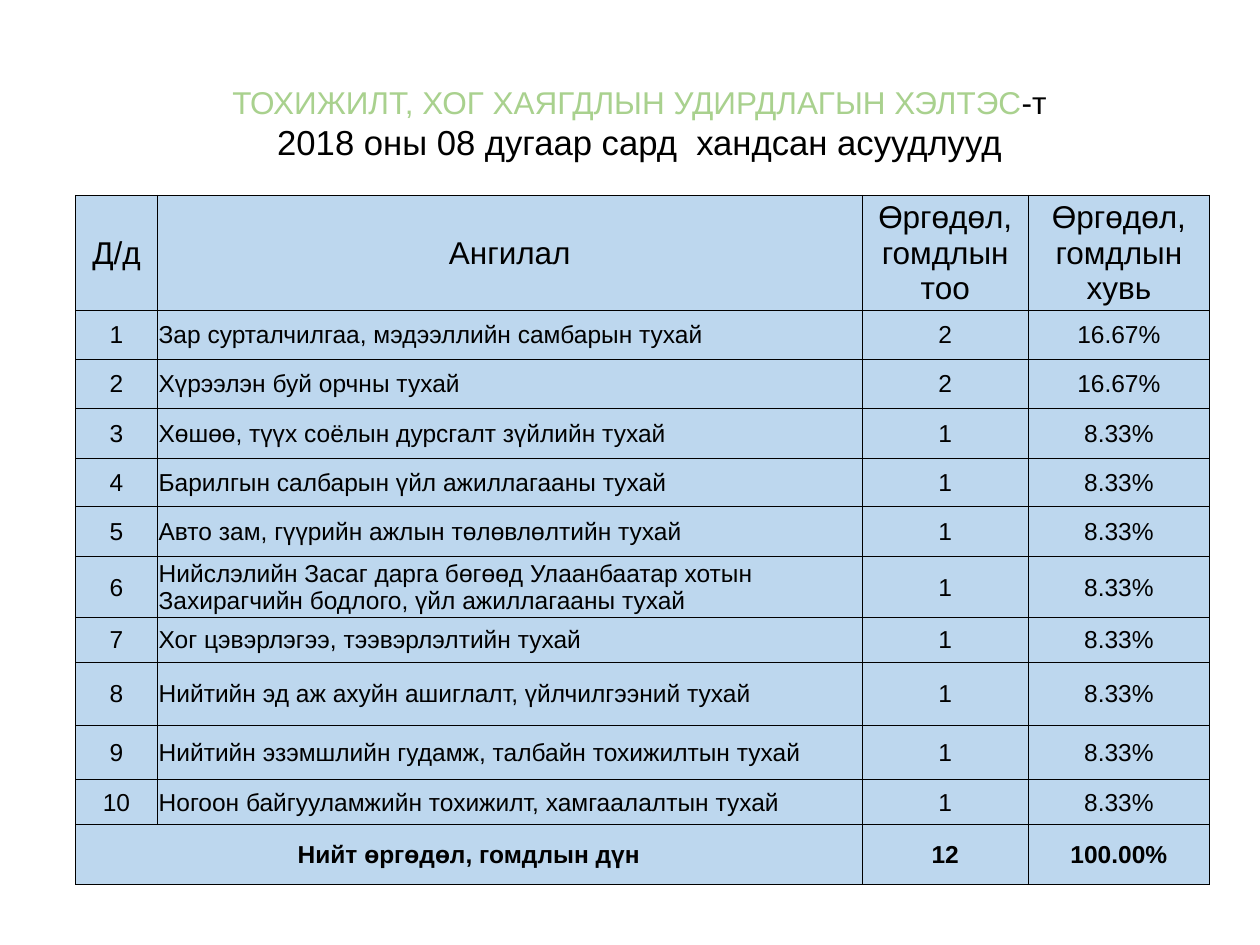
from lxml import etree
from pptx import Presentation
from pptx import util as u
from pptx.dml.color import RGBColor
from pptx.enum import text
from pptx.oxml import ns

BLACK, GREEN, BLUE = "000000", "A9D18E", "BDD7EE"
HEADINGS = ["Д/д", "Ангилал", "Өргөдөл, гомдлын тоо", "Өргөдөл, гомдлын хувь"]
TOPICS = [
    ("Зар сурталчилгаа, мэдээллийн самбарын тухай", "2", "16.67%"),
    ("Хүрээлэн буй орчны тухай", "2", "16.67%"),
    ("Хөшөө, түүх соёлын дурсгалт зүйлийн тухай", "1", "8.33%"),
    ("Барилгын салбарын үйл ажиллагааны тухай", "1", "8.33%"),
    ("Авто зам, гүүрийн ажлын төлөвлөлтийн тухай", "1", "8.33%"),
    ("Нийслэлийн Засаг дарга бөгөөд Улаанбаатар хотын "
     "Захирагчийн бодлого, үйл ажиллагааны тухай", "1", "8.33%"),
    ("Хог цэвэрлэгээ, тээвэрлэлтийн тухай", "1", "8.33%"),
    ("Нийтийн эд аж ахуйн ашиглалт, үйлчилгээний тухай", "1", "8.33%"),
    ("Нийтийн эзэмшлийн гудамж, талбайн тохижилтын тухай", "1", "8.33%"),
    ("Ногоон байгууламжийн тохижилт, хамгаалалтын тухай", "1", "8.33%"),
]
TOTAL = ["Нийт өргөдөл, гомдлын дүн", "", "12", "100.00%"]
COLUMN_WIDTHS = [0.65, 5.6, 1.32, 1.44]
ROW_HEIGHTS = [0.65, 0.39, 0.39, 0.4, 0.38, 0.4, 0.39, 0.36, 0.5, 0.43, 0.36, 0.47]


def color(value):
    return RGBColor.from_string(value)


def style(run, size, ink=BLACK, bold=False):
    run.font.name = "Arial"
    run.font.size = u.Pt(size)
    run.font.bold = bold
    run.font.color.rgb = color(ink)


def add_title(slide, left, top, width, height):
    frame = slide.shapes.add_textbox(left, top, width, height).text_frame
    frame.word_wrap = True
    frame.vertical_anchor = text.MSO_ANCHOR.TOP
    frame.margin_top = frame.margin_bottom = 0
    department = frame.paragraphs[0]
    period = frame.add_paragraph()
    for line, words, size, ink in [
        (department, "ТОХИЖИЛТ, ХОГ ХАЯГДЛЫН УДИРДЛАГЫН ХЭЛТЭС", 18, GREEN),
        (department, "-т", 18, BLACK),
        (period, "2018 оны 08 дугаар сард  хандсан асуудлууд", 19.8, BLACK),
    ]:
        line.alignment = text.PP_ALIGN.CENTER
        run = line.add_run()
        run.text = words
        style(run, size, ink)


def add_borders(cell):
    properties = cell._tc.get_or_add_tcPr()
    for position, side in enumerate(("lnL", "lnR", "lnT", "lnB")):
        line = etree.Element(ns.qn("a:" + side), w=str(u.Pt(0.5)))
        fill = etree.SubElement(line, ns.qn("a:solidFill"))
        etree.SubElement(fill, ns.qn("a:srgbClr"), val=BLACK)
        properties.insert(position, line)


def fill_cell(cell, words, size, bold, alignment):
    cell.fill.solid()
    cell.fill.fore_color.rgb = color(BLUE)
    cell.vertical_anchor = text.MSO_ANCHOR.MIDDLE
    cell.margin_left = cell.margin_right = cell.margin_top = u.Inches(0.01)
    cell.margin_bottom = 0
    add_borders(cell)
    cell.text_frame.text = words
    paragraph = cell.text_frame.paragraphs[0]
    paragraph.alignment = alignment
    for run in paragraph.runs:
        style(run, size, bold=bold)


def add_complaints_table(slide, left, top, width, height):
    topics = [[str(number), *topic] for number, topic in enumerate(TOPICS, 1)]
    records = [HEADINGS, *topics, TOTAL]
    last = len(records) - 1
    table = slide.shapes.add_table(
        len(records), len(HEADINGS), left, top, width, height).table
    for column, share in zip(table.columns, COLUMN_WIDTHS):
        column.width = int(width * share / sum(COLUMN_WIDTHS))
    for row, row_height in zip(table.rows, ROW_HEIGHTS):
        row.height = u.Inches(row_height)
    for r, record in enumerate(records):
        for c, words in enumerate(record):
            is_topic = c == 1 and 0 < r < last
            alignment = text.PP_ALIGN.LEFT if is_topic else text.PP_ALIGN.CENTER
            fill_cell(table.cell(r, c), words, 14 if r else 18, r == last, alignment)
    table.cell(last, 0).merge(table.cell(last, 1))


def main():
    deck = Presentation()
    deck.slide_width, deck.slide_height = u.Inches(10), u.Inches(7.5)
    slide = deck.slides.add_slide(deck.slide_layouts[6])
    add_title(slide, u.Inches(0.84), u.Inches(0.66), u.Inches(8.47), u.Inches(0.65))
    add_complaints_table(
        slide, u.Inches(0.6), u.Inches(1.55), u.Inches(9), u.Inches(5.22))
    deck.save("out.pptx")


if __name__ == "__main__":
    main()
